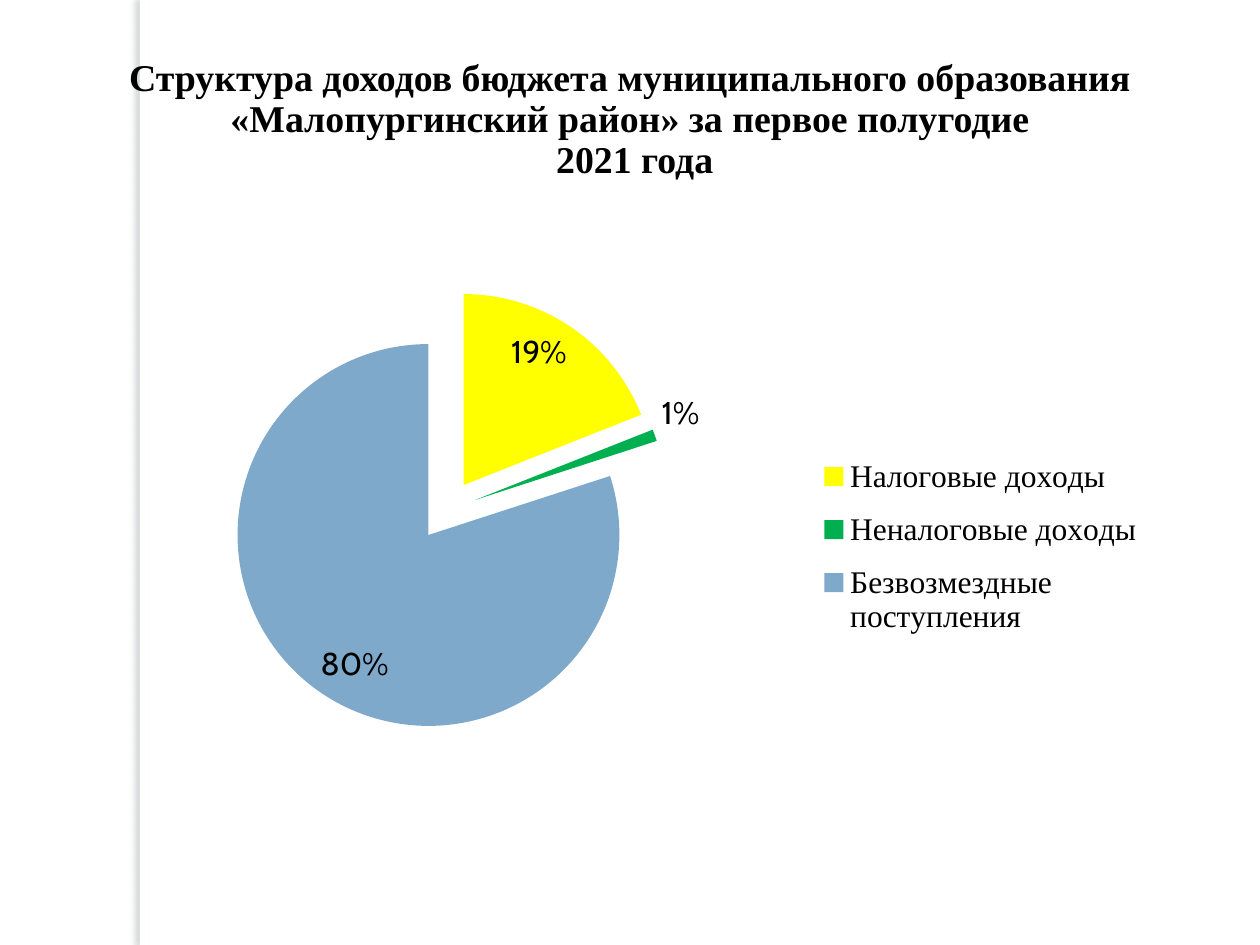
from lxml import etree
from pptx import Presentation
from pptx import util as u
from pptx.chart.data import CategoryChartData
from pptx.dml.color import RGBColor
from pptx.enum import chart as ch, shapes, text
from pptx.oxml import parse_xml
from pptx.oxml.ns import nsdecls, qn

SLICES = [
    ("Налоговые доходы", 19, "FFFF00"),
    ("Неналоговые доходы", 1, "00B050"),
    ("Безвозмездные поступления", 80, "7EA9CA"),
]


def rgb(value):
    return RGBColor.from_string(value)


def set_attrs(obj, values):
    for name, value in values.items():
        setattr(obj, name, value)


def set_font(font, color="000000", **values):
    set_attrs(font, values)
    font.color.rgb = rgb(color)


def set_layout(parent, before, x, y, w, h, inner=False):
    for old in parent.findall(qn("c:layout")):
        parent.remove(old)
    target = '<c:layoutTarget val="inner"/>' if inner else ""
    modes = '<c:xMode val="edge"/><c:yMode val="edge"/>'
    sizes = "".join(f'<c:{k} val="{v}"/>' for k, v in zip("xywh", (x, y, w, h)))
    before.addprevious(parse_xml(
        f'<c:layout {nsdecls("c")}><c:manualLayout>{target}{modes}{sizes}'
        "</c:manualLayout></c:layout>"))


def add_side_strip(s, x, y, w, h):
    sp = s.shapes.add_shape(shapes.MSO_SHAPE.RECTANGLE, x, y, w, h)
    sp.fill.solid()
    sp.fill.fore_color.rgb = rgb("FFFFFF")
    sp.line.fill.background()
    sp._element.spPr.append(parse_xml(
        f'<a:effectLst {nsdecls("a")}>'
        f'<a:outerShdw blurRad="{u.Pt(3)}" dist="{u.Pt(3)}" dir="10800000" '
        'algn="ctr" rotWithShape="0"><a:srgbClr val="656E75">'
        '<a:alpha val="25000"/></a:srgbClr></a:outerShdw></a:effectLst>'))
    s.shapes._spTree.insert(2, sp._element)


def add_title(s, x, y, w, h):
    sp = s.shapes.title
    set_attrs(sp, {"left": x, "top": y, "width": w, "height": h})
    tf = sp.text_frame
    set_attrs(tf, {"word_wrap": True, "auto_size": text.MSO_AUTO_SIZE.NONE,
                   "vertical_anchor": text.MSO_ANCHOR.MIDDLE})
    p = tf.paragraphs[0]
    p.text = ("Структура доходов бюджета муниципального образования "
              "«Малопургинский район» за первое полугодие\v 2021 года")
    set_attrs(p, {"alignment": text.PP_ALIGN.CENTER, "line_spacing": 0.9})
    for r in p.runs:
        set_font(r.font, name="Times New Roman", size=u.Pt(21.6), bold=True)


def add_income_pie(s, x, y, w, h):
    names, values, colors = zip(*SLICES)
    data = CategoryChartData()
    data.categories = names
    data.add_series("Series 1", values)
    chart = s.shapes.add_chart(ch.XL_CHART_TYPE.PIE, x, y, w, h, data).chart
    set_attrs(chart, {"has_title": False, "has_legend": True})
    set_font(chart.font, name="Cabin", size=u.Pt(18))

    legend = chart.legend
    set_attrs(legend, {"position": ch.XL_LEGEND_POSITION.RIGHT,
                       "include_in_layout": False})
    set_font(legend.font, name="Times New Roman", size=u.Pt(18))
    box = legend._element
    set_layout(box, box.find(qn("c:overlay")), 0.67, 0.38, 0.31, 0.35)

    plot = chart.plots[0]
    plot.vary_by_categories = True
    pie = plot._element
    set_layout(pie.getparent(), pie, 0.12, 0.18, 0.46, 0.63, inner=True)

    series = plot.series[0]
    for i, color in enumerate(colors):
        fill = series.points[i].format.fill
        fill.solid()
        fill.fore_color.rgb = rgb(color)
    for spPr in series._element.findall(f"{qn('c:dPt')}/{qn('c:spPr')}"):
        explosion = etree.Element(qn("c:explosion"), val="16")
        spPr.addprevious(explosion)

    labels = series.data_labels
    set_attrs(labels, {"show_percentage": True, "show_value": False,
                       "number_format": "0%", "number_format_is_linked": False,
                       "position": ch.XL_LABEL_POSITION.INSIDE_END})
    set_font(labels.font, name="Cabin", size=u.Pt(18))
    small = series.points[1].data_label
    set_font(small.font, name="Cabin", size=u.Pt(18))
    small.position = ch.XL_LABEL_POSITION.OUTSIDE_END
    label = series._element.find(f".//{qn('c:dLbl')}")
    label.find(qn("c:showVal")).set("val", "0")
    label.find(qn("c:showPercent")).set("val", "1")


def main():
    prs = Presentation()
    set_attrs(prs, {"slide_width": u.Cm(25.4), "slide_height": u.Cm(19.05)})
    s = prs.slides.add_slide(prs.slide_layouts[5])
    add_side_strip(s, u.Cm(2.82), 0, u.Cm(0.2), prs.slide_height)
    add_title(s, u.Cm(1.27), u.Cm(0.84), u.Cm(22.86), u.Cm(3.18))
    add_income_pie(s, u.Cm(1.07), u.Cm(4.24), u.Cm(22.66), u.Cm(12.22))
    prs.save("out.pptx")


if __name__ == "__main__":
    main()
